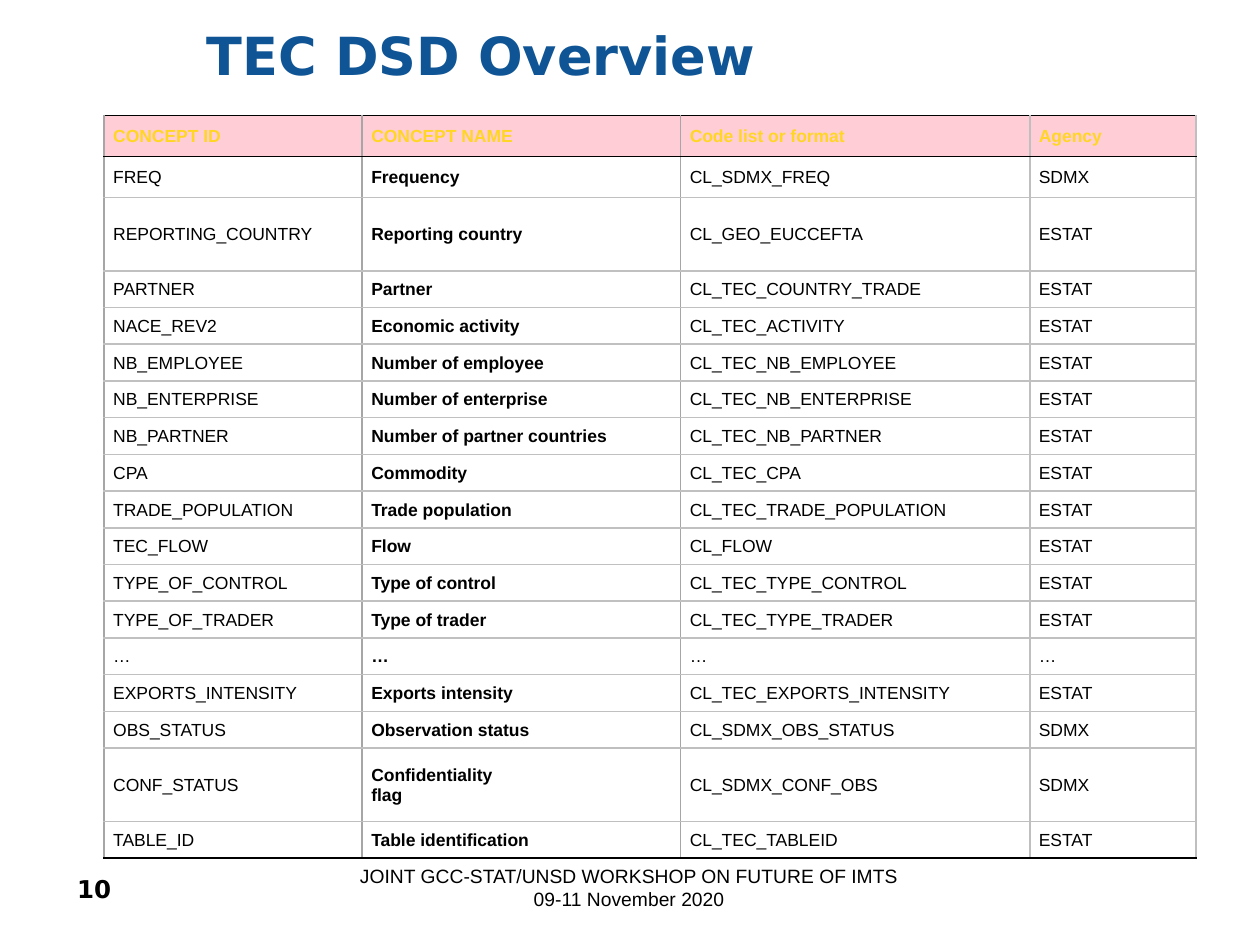
from dataclasses import dataclass

from lxml.etree import SubElement
from pptx import Presentation
from pptx.dml.color import RGBColor
from pptx.enum.text import MSO_ANCHOR as Anchor, PP_ALIGN as Align
from pptx.oxml.ns import qn
from pptx.util import Pt

TITLE = "TEC DSD Overview"
FOOTER = "JOINT GCC-STAT/UNSD WORKSHOP ON FUTURE OF IMTS 09-11 November 2020"
PAGE_NUMBER = "10"
CONCEPTS = [
    ("CONCEPT ID", "CONCEPT NAME", "Code list or format", "Agency"),
    ("FREQ", "Frequency", "CL_SDMX_FREQ", "SDMX"),
    ("REPORTING_COUNTRY", "Reporting country", "CL_GEO_EUCCEFTA", "ESTAT"),
    ("PARTNER", "Partner", "CL_TEC_COUNTRY_TRADE", "ESTAT"),
    ("NACE_REV2", "Economic activity", "CL_TEC_ACTIVITY", "ESTAT"),
    ("NB_EMPLOYEE", "Number of employee", "CL_TEC_NB_EMPLOYEE", "ESTAT"),
    ("NB_ENTERPRISE", "Number of enterprise", "CL_TEC_NB_ENTERPRISE", "ESTAT"),
    ("NB_PARTNER", "Number of partner countries", "CL_TEC_NB_PARTNER", "ESTAT"),
    ("CPA", "Commodity", "CL_TEC_CPA", "ESTAT"),
    ("TRADE_POPULATION", "Trade population", "CL_TEC_TRADE_POPULATION", "ESTAT"),
    ("TEC_FLOW", "Flow", "CL_FLOW", "ESTAT"),
    ("TYPE_OF_CONTROL", "Type of control", "CL_TEC_TYPE_CONTROL", "ESTAT"),
    ("TYPE_OF_TRADER", "Type of trader", "CL_TEC_TYPE_TRADER", "ESTAT"),
    ("…", "…", "…", "…"),
    ("EXPORTS_INTENSITY", "Exports intensity", "CL_TEC_EXPORTS_INTENSITY", "ESTAT"),
    ("OBS_STATUS", "Observation status", "CL_SDMX_OBS_STATUS", "SDMX"),
    ("CONF_STATUS", "Confidentiality\vflag", "CL_SDMX_CONF_OBS", "SDMX"),
    ("TABLE_ID", "Table identification", "CL_TEC_TABLEID", "ESTAT"),
]
LAST = len(CONCEPTS)
COLUMN_WIDTHS = [147.5, 182, 199.5, 95]
ROW_HEIGHT = 21
SPECIAL_HEIGHTS = {0: 23.4, 1: 23.4, 2: 2 * ROW_HEIGHT, 16: 2 * ROW_HEIGHT}
ROW_HEIGHTS = [SPECIAL_HEIGHTS.get(row, ROW_HEIGHT) for row in range(LAST)]
NAME_COLUMN = 1
FIRST_STATUS_ROW = 15


@dataclass(frozen=True)
class Theme:
    title: str = "0F5494"
    text: str = "000000"
    header_text: str = "FFD624"
    header_fill: str = "FFCDD5"
    rule: str = "000000"
    row_line: str = "C0C0C0"
    light_line: str = "BFBFBF"
    column_line: str = "A6A6A6"
    body_font: str = "Arial"
    display_font: str = "DejaVu Sans"
    title_size: float = 30
    number_size: float = 14
    footer_size: float = 11
    table_size: float = 10


THEME = Theme()


def style(paragraph, font_name, size, color, bold=False, align=Align.LEFT):
    paragraph.alignment = align
    font = paragraph.font
    font.name, font.size, font.bold = font_name, Pt(size), bold
    font.color.rgb = RGBColor.from_string(color)


def place(shape, left, top, width, height):
    shape.left, shape.top, shape.width, shape.height = map(Pt, (left, top, width, height))


def add_text(slide, text, box, *font, **options):
    frame = slide.shapes.add_textbox(*map(Pt, box)).text_frame
    frame.word_wrap = True
    frame.text = text
    style(frame.paragraphs[0], *font, **options)


def row_edge_color(edge):
    if edge in (0, 1, LAST):
        return THEME.rule
    return THEME.light_line if edge > FIRST_STATUS_ROW else THEME.row_line


def column_edge_color(edge):
    return THEME.column_line if edge <= 2 else THEME.light_line


def set_borders(cell, row, column):
    properties = cell._tc.get_or_add_tcPr()
    for tag, color in (
        ("a:lnL", column_edge_color(column)),
        ("a:lnR", column_edge_color(column + 1)),
        ("a:lnT", row_edge_color(row)),
        ("a:lnB", row_edge_color(row + 1)),
    ):
        line = SubElement(properties, qn(tag), w=str(Pt(1)))
        SubElement(SubElement(line, qn("a:solidFill")), qn("a:srgbClr"), val=color)


def fill_cell(cell, text, row, column):
    header = row == 0
    set_borders(cell, row, column)
    if header:
        cell.fill.solid()
        cell.fill.fore_color.rgb = RGBColor.from_string(THEME.header_fill)
    else:
        cell.fill.background()
    cell.vertical_anchor = Anchor.MIDDLE
    cell.margin_left = cell.margin_right = Pt(5.2)
    cell.margin_top = cell.margin_bottom = 0
    cell.text = text
    paragraph = cell.text_frame.paragraphs[0]
    justified = column != NAME_COLUMN and row < FIRST_STATUS_ROW
    style(paragraph, THEME.body_font, THEME.table_size,
          THEME.header_text if header else THEME.text,
          bold=header or column == NAME_COLUMN,
          align=Align.JUSTIFY if justified else Align.LEFT)
    paragraph.line_spacing = 1.07
    paragraph.space_before = paragraph.space_after = Pt(0.5)


def add_concept_table(slide, left, top):
    size = sum(COLUMN_WIDTHS), sum(ROW_HEIGHTS)
    table = slide.shapes.add_table(
        LAST, len(COLUMN_WIDTHS), *map(Pt, (left, top, *size))).table
    table.first_row = table.horz_banding = False
    for column, width in zip(table.columns, COLUMN_WIDTHS):
        column.width = Pt(width)
    for row, height in zip(table.rows, ROW_HEIGHTS):
        row.height = Pt(height)
    for row, texts in enumerate(CONCEPTS):
        for column, text in enumerate(texts):
            fill_cell(table.cell(row, column), text, row, column)


def main():
    presentation = Presentation()
    presentation.slide_width, presentation.slide_height = Pt(720), Pt(540)
    slide = presentation.slides.add_slide(presentation.slide_layouts[5])

    add_text(slide, FOOTER, (190, 490.5, 339, 50), THEME.body_font,
             THEME.footer_size, THEME.text, align=Align.CENTER)
    add_text(slide, PAGE_NUMBER, (37, 496, 108, 37.5), THEME.display_font,
             THEME.number_size, THEME.text, bold=True)

    title = slide.shapes.title
    place(title, 111, 9, 471, 44)
    title.text_frame.text = TITLE
    title.text_frame.vertical_anchor = Anchor.MIDDLE
    style(title.text_frame.paragraphs[0], THEME.display_font, THEME.title_size,
          THEME.title, bold=True)

    add_concept_table(slide, 59.5, 66)
    presentation.save("out.pptx")


if __name__ == "__main__":
    main()
